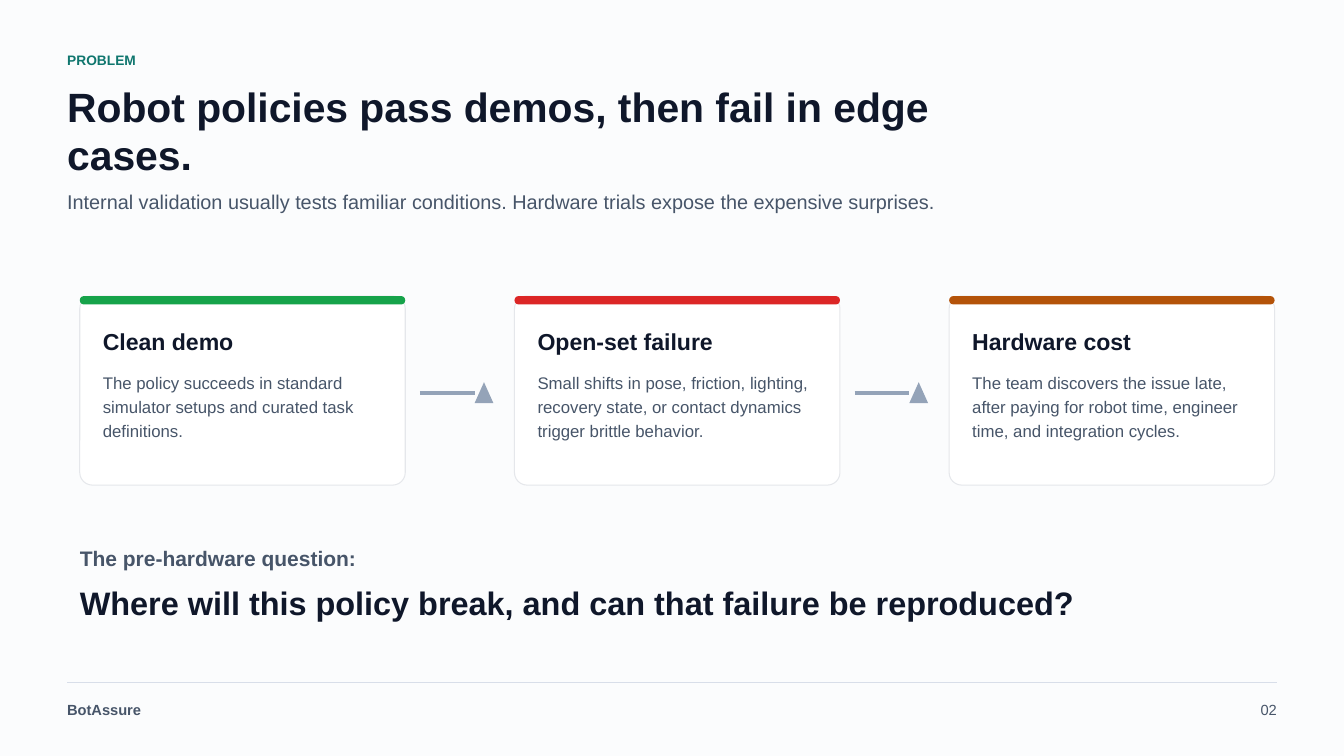
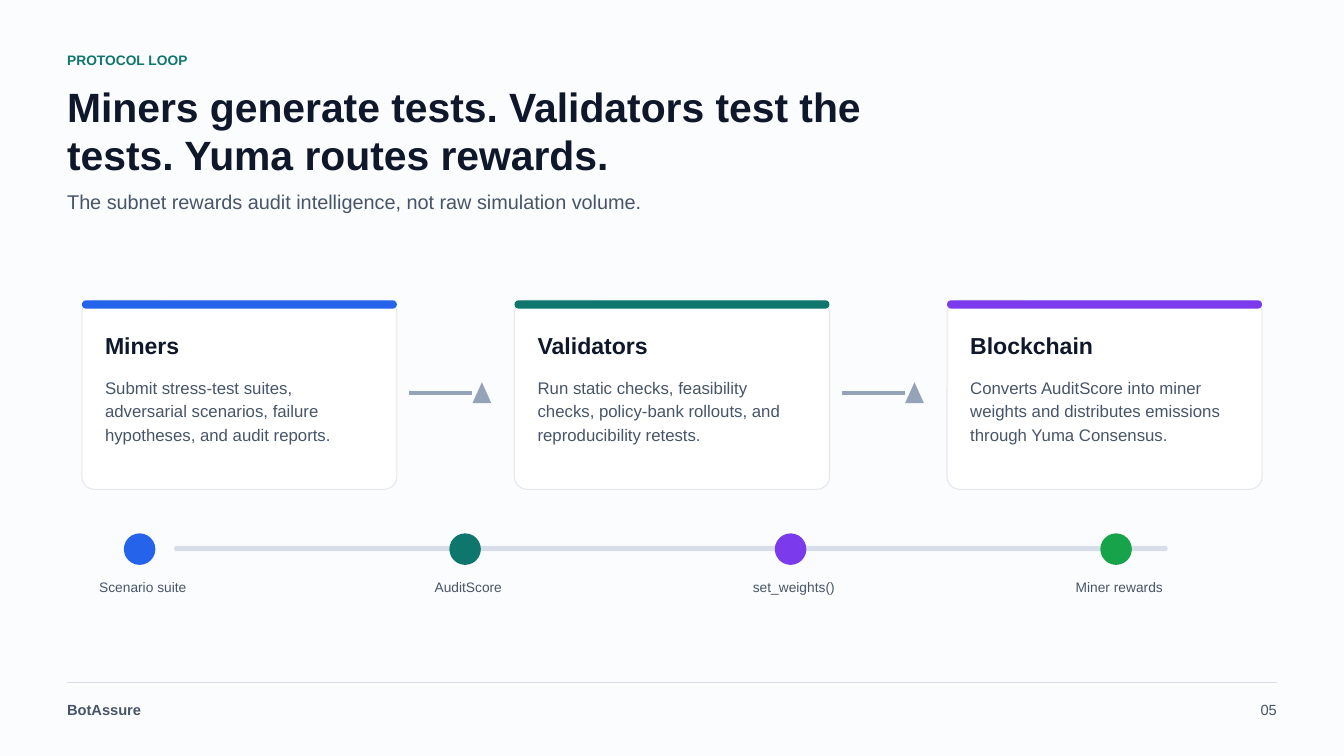
from dataclasses import dataclass

from lxml import etree
from pptx import Presentation
from pptx.dml.color import RGBColor
from pptx.enum.shapes import MSO_CONNECTOR, MSO_SHAPE
from pptx.enum.text import PP_ALIGN
from pptx.oxml.ns import qn
from pptx.util import Emu, Pt

ROUNDED = MSO_SHAPE.ROUNDED_RECTANGLE
OVAL = MSO_SHAPE.OVAL
TRIANGLE = MSO_SHAPE.ISOSCELES_TRIANGLE
STRAIGHT = MSO_CONNECTOR.STRAIGHT
LEFT, CENTER, RIGHT = PP_ALIGN.LEFT, PP_ALIGN.CENTER, PP_ALIGN.RIGHT
EMU_PER_PX = 9525
SLIDE_W, SLIDE_H = 1280, 720
MARGIN = 64


@dataclass(frozen=True)
class Theme:
    font: str = "Arial"
    paper: str = "FBFCFD"
    white: str = "FFFFFF"
    ink: str = "0F172A"
    muted: str = "475569"
    arrow: str = "94A3B8"
    rule: str = "D8DEE9"
    border: str = "E5E7EB"
    teal: str = "0F766E"
    green: str = "16A34A"
    red: str = "DC2626"
    amber: str = "B45309"
    blue: str = "2563EB"
    violet: str = "7C3AED"
    title: float = 29.2
    question: float = 23.2
    card_title: float = 16.5
    lead: float = 15
    subtitle: float = 14.2
    body: float = 12
    footer: float = 10.5
    label: float = 9.8


T = Theme()


def px(n):
    return Emu(round(n * EMU_PER_PX))


def rgb(color):
    return RGBColor.from_string(color)


def add_text(s, x, y, w, h, text, size, color=T.muted, bold=False,
             align=LEFT, spacing=1.08):
    tf = s.shapes.add_textbox(px(x), px(y), px(w), px(h)).text_frame
    tf.word_wrap = True
    tf.margin_left = tf.margin_right = tf.margin_top = tf.margin_bottom = 0
    p = tf.paragraphs[0]
    p.alignment = align
    p.line_spacing = spacing
    r = p.add_run()
    r.text = text
    r.font.name = T.font
    r.font.size = Pt(size)
    r.font.bold = bold
    r.font.color.rgb = rgb(color)


def add_shape(s, kind, x, y, w, h, fill, line=None, radius=None):
    sp = s.shapes.add_shape(kind, px(x), px(y), px(w), px(h))
    sp.shadow.inherit = False
    sp.fill.solid()
    sp.fill.fore_color.rgb = rgb(fill)
    if line:
        sp.line.color.rgb = rgb(line)
        sp.line.width = px(1)
    else:
        sp.line.fill.background()
    if radius is not None:
        sp.adjustments[0] = radius / min(w, h)


def add_line(s, x, y, w, color, weight):
    line = s.shapes.add_connector(STRAIGHT, px(x), px(y), px(x + w), px(y))
    line.line.color.rgb = rgb(color)
    line.line.width = px(weight)
    etree.SubElement(line._element.spPr, qn("a:effectLst"))


def add_slide(prs, number, eyebrow, title, subtitle):
    s = prs.slides.add_slide(prs.slide_layouts[6])
    add_text(s, MARGIN, 48, 520, 24, eyebrow, T.label, T.teal, bold=True)
    add_text(s, MARGIN, 80, 860, 92, title, T.title, T.ink, bold=True,
             spacing=0.98)
    add_text(s, MARGIN, 178, 860, 52, subtitle, T.subtitle, spacing=1.1)
    add_line(s, MARGIN, 650, SLIDE_W - 2 * MARGIN, T.rule, 1)
    add_text(s, MARGIN, 666, 180, 24, "BotAssure", T.footer, bold=True)
    add_text(s, SLIDE_W - MARGIN - 48, 666, 48, 24, number, T.footer,
             align=RIGHT)
    return s


def add_card(s, x, y, w, accent, title, body):
    pad = 22
    add_shape(s, ROUNDED, x, y, w, 180, T.white, T.border, radius=12)
    add_shape(s, ROUNDED, x, y, w, 8, accent, radius=4)
    add_text(s, x + pad, y + 28, w - 2 * pad, 30, title, T.card_title, T.ink,
             bold=True)
    add_text(s, x + pad, y + 70, w - 2 * pad, 92, body, T.body, spacing=1.18)


def add_arrow(s, x, length):
    middle = 374
    add_line(s, x, middle, length, T.arrow, 4)
    add_shape(s, TRIANGLE, x + length, middle - 10, 18, 20, T.arrow)


def add_card_flow(s, cards, x, y, w, pitch, arrow_gap, arrow_length):
    for i, card in enumerate(cards):
        left = x + i * pitch
        add_card(s, left, y, w, *card)
        if i < len(cards) - 1:
            add_arrow(s, left + w + arrow_gap, arrow_length)


def add_timeline(s, steps):
    add_shape(s, ROUNDED, 166, 520, 946, 5, T.rule, radius=2)
    for i, (color, label) in enumerate(steps):
        x = 118 + i * 310
        add_shape(s, OVAL, x, 508, 30, 30, color)
        add_text(s, x - 38, 550, 112, 22, label, T.label, align=CENTER)


def build_problem(prs):
    s = add_slide(
        prs, "02", "PROBLEM",
        "Robot policies pass demos, then fail in edge cases.",
        "Internal validation usually tests familiar conditions. "
        "Hardware trials expose the expensive surprises.")
    cards = [
        (T.green, "Clean demo",
         "The policy succeeds in standard simulator setups and curated task "
         "definitions."),
        (T.red, "Open-set failure",
         "Small shifts in pose, friction, lighting, recovery state, or "
         "contact dynamics trigger brittle behavior."),
        (T.amber, "Hardware cost",
         "The team discovers the issue late, after paying for robot time, "
         "engineer time, and integration cycles."),
    ]
    add_card_flow(s, cards, x=76, y=282, w=310, pitch=414,
                  arrow_gap=14, arrow_length=52)
    add_text(s, 76, 518, 360, 28, "The pre-hardware question:", T.lead,
             bold=True)
    add_text(s, 76, 552, 980, 52,
             "Where will this policy break, and can that failure be "
             "reproduced?", T.question, T.ink, bold=True)


def build_protocol_loop(prs):
    s = add_slide(
        prs, "05", "PROTOCOL LOOP",
        "Miners generate tests. Validators test the tests. "
        "Yuma routes rewards.",
        "The subnet rewards audit intelligence, not raw simulation volume.")
    cards = [
        (T.blue, "Miners",
         "Submit stress-test suites, adversarial scenarios, failure "
         "hypotheses, and audit reports."),
        (T.teal, "Validators",
         "Run static checks, feasibility checks, policy-bank rollouts, and "
         "reproducibility retests."),
        (T.violet, "Blockchain",
         "Converts AuditScore into miner weights and distributes emissions "
         "through Yuma Consensus."),
    ]
    add_card_flow(s, cards, x=78, y=286, w=300, pitch=412,
                  arrow_gap=12, arrow_length=60)
    add_timeline(s, [
        (T.blue, "Scenario suite"),
        (T.teal, "AuditScore"),
        (T.violet, "set_weights()"),
        (T.green, "Miner rewards"),
    ])


def main():
    prs = Presentation()
    prs.slide_width, prs.slide_height = px(SLIDE_W), px(SLIDE_H)
    background = prs.slide_master.background.fill
    background.solid()
    background.fore_color.rgb = rgb(T.paper)
    build_problem(prs)
    build_protocol_loop(prs)
    prs.save("out.pptx")


if __name__ == "__main__":
    main()
